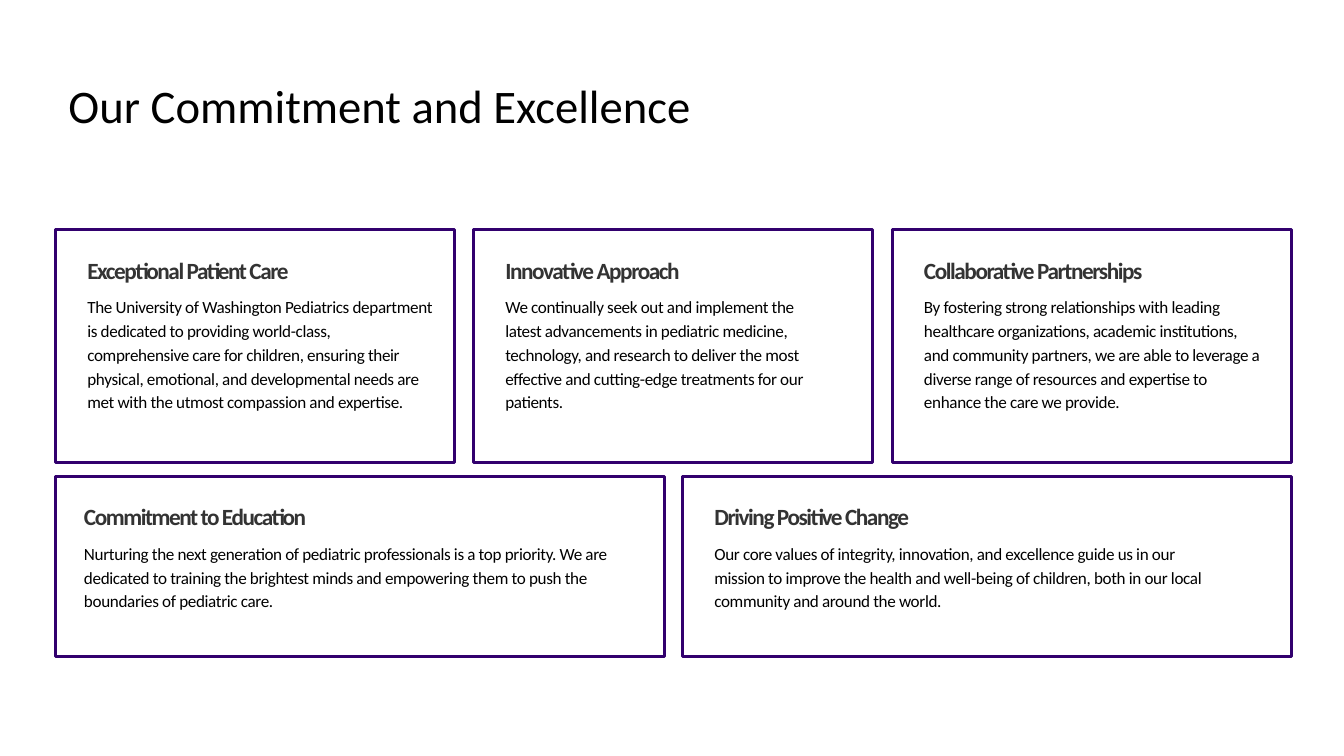
from pptx import Presentation
from pptx import util as u
from pptx.dml.color import RGBColor
from pptx.enum import shapes, text

PX = u.Inches(1) // 100
PURPLE = RGBColor(0x32, 0x00, 0x6E)
CHARCOAL = RGBColor(0x33, 0x33, 0x33)
BLACK = RGBColor(0, 0, 0)
WHITE = RGBColor(255, 255, 255)

LEFT = 83
RIGHT = 1922
PADDING = 47
HEADING_TOP = 40
BODY_TOP = 95
HEADING_STYLE = dict(size=24.9, color=CHARCOAL, bold=True, tracking=-1.5, leading=u.Pt(29))
BODY_STYLE = dict(size=18.3, color=BLACK, tracking=-0.4, leading=u.Pt(25.4))

ROWS = [
    (342, 594, 346, [
        ("Exceptional Patient Care",
         "The University of Washington Pediatrics department is dedicated to providing "
         "world-class, comprehensive care for children, ensuring their physical, emotional, "
         "and developmental needs are met with the utmost compassion and expertise.", 517, PADDING),
        ("Innovative Approach",
         "We continually seek out and implement the latest advancements in pediatric medicine, "
         "technology, and research to deliver the most effective and cutting-edge treatments "
         "for our patients.", 484, PADDING),
        ("Collaborative Partnerships",
         "By fostering strong relationships with leading healthcare organizations, academic "
         "institutions, and community partners, we are able to leverage a diverse range of "
         "resources and expertise to enhance the care we provide.", 500, PADDING),
    ]),
    (709, 906, 268, [
        ("Commitment to Education",
         "Nurturing the next generation of pediatric professionals is a top priority. We are "
         "dedicated to training the brightest minds and empowering them to push the boundaries "
         "of pediatric care.", 824, 42),
        ("Driving Positive Change",
         "Our core values of integrity, innovation, and excellence guide us in our mission to "
         "improve the health and well-being of children, both in our local community and around "
         "the world.", 746, PADDING),
    ]),
]


def write(frame, words, *, size, color, leading, bold=False, tracking=0):
    paragraph = frame.paragraphs[0]
    paragraph.line_spacing = leading
    run = paragraph.add_run()
    run.text = words
    run.font.name = "Calibri"
    run.font.size = u.Pt(size)
    run.font.bold = bold
    run.font.color.rgb = color
    if tracking:
        run.font._element.set("spc", str(round(tracking * 100)))


class Page:
    def __init__(self, slide):
        self.slide = slide

    def text(self, words, x, y, w, h, inset=True, anchor=text.MSO_ANCHOR.TOP, **style):
        frame = self.slide.shapes.add_textbox(x * PX, y * PX, w * PX, h * PX).text_frame
        frame.word_wrap = True
        frame.vertical_anchor = anchor
        if not inset:
            frame.margin_left = frame.margin_right = 0
            frame.margin_top = frame.margin_bottom = 0
        write(frame, words, **style)

    def panel(self, x, y, w, h):
        panel = self.slide.shapes.add_shape(
            shapes.MSO_SHAPE.RECTANGLE, x * PX, y * PX, w * PX, h * PX)
        panel.shadow.inherit = False
        panel.fill.solid()
        panel.fill.fore_color.rgb = WHITE
        panel.line.color.rgb = PURPLE
        panel.line.width = u.Pt(3)

    def card(self, x, y, w, h, heading, body, body_width, padding):
        self.panel(x, y, w, h)
        self.text(heading, x + padding, y + HEADING_TOP, w - padding, 40,
                  inset=False, **HEADING_STYLE)
        self.text(body, x + padding, y + BODY_TOP, body_width, h - BODY_TOP - PADDING,
                  inset=False, **BODY_STYLE)


def main():
    deck = Presentation()
    deck.slide_width = 2000 * PX
    deck.slide_height = 1125 * PX
    page = Page(deck.slides.add_slide(deck.slide_layouts[6]))

    page.text("Our Commitment and Excellence", 92, 119, 1725, 86,
              anchor=text.MSO_ANCHOR.MIDDLE, size=50, color=BLACK, leading=0.9)
    for top, width, height, cards in ROWS:
        pitch = (RIGHT - LEFT - width) / (len(cards) - 1)
        for column, content in enumerate(cards):
            page.card(LEFT + round(column * pitch), top, width, height, *content)

    deck.save("out.pptx")


if __name__ == "__main__":
    main()
